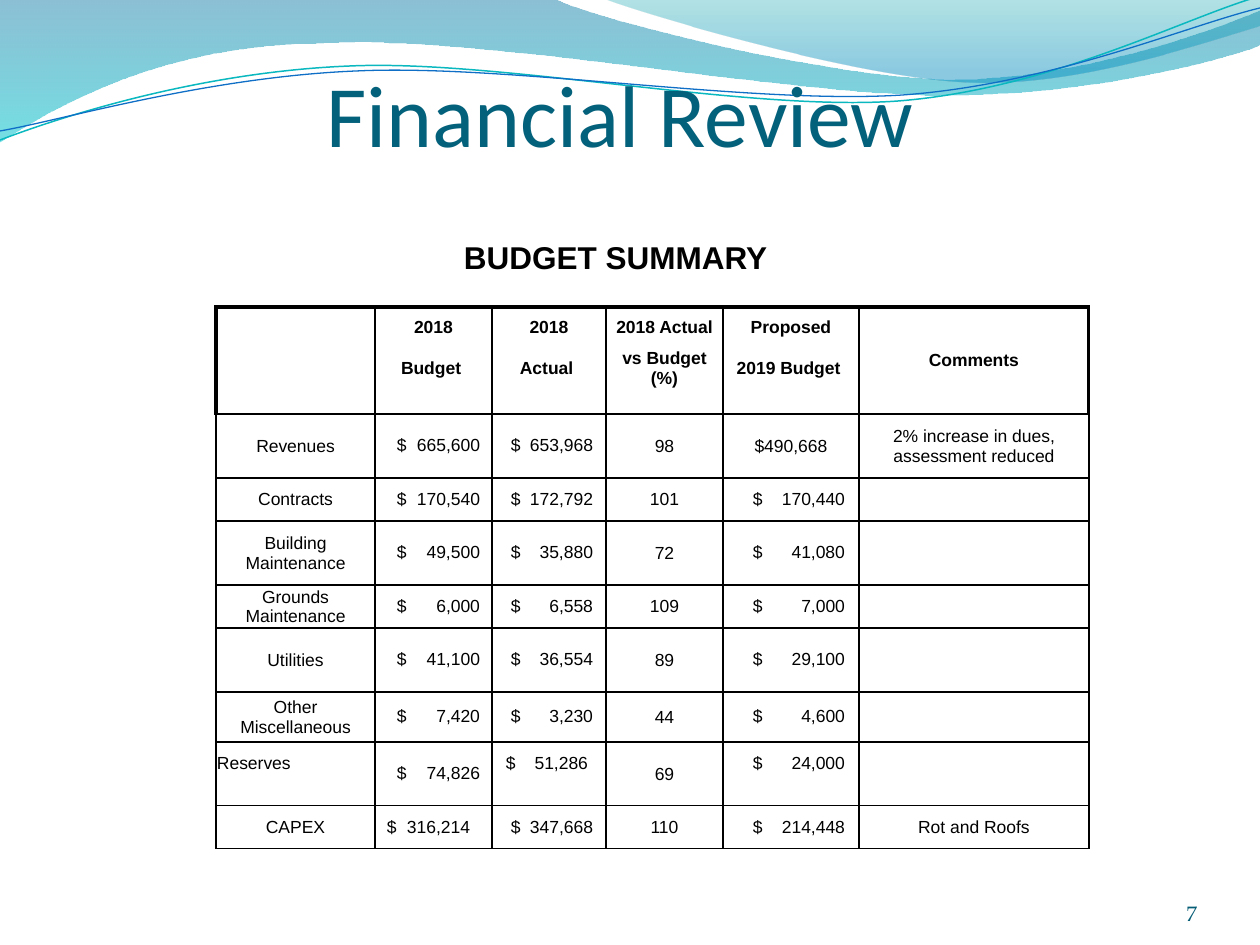
"""Build the financial review slide with its budget summary table."""
from lxml import etree
from pptx import Presentation
from pptx.dml.color import RGBColor
from pptx.enum.text import MSO_ANCHOR, PP_ALIGN
from pptx.oxml.ns import qn
from pptx.util import Emu, Pt

LEFT, CENTER, RIGHT = PP_ALIGN.LEFT, PP_ALIGN.CENTER, PP_ALIGN.RIGHT
TOP, MIDDLE, BOTTOM = MSO_ANCHOR.TOP, MSO_ANCHOR.MIDDLE, MSO_ANCHOR.BOTTOM

BLACK = RGBColor(0x00, 0x00, 0x00)
TITLE_TEAL = RGBColor(0x04, 0x61, 0x7B)
NUMBER_TEAL = RGBColor(0x04, 0x5C, 0x75)
DEEP_BLUE = RGBColor(0x00, 0x74, 0xA1)
AQUA = RGBColor(0x00, 0xC6, 0xCF)
SEA_GREEN = RGBColor(0x00, 0xA1, 0xA9)
SKY_BLUE = RGBColor(0x00, 0x8B, 0xBF)
LINE_AQUA = RGBColor(0x0A, 0xB8, 0xBF)
LINE_BLUE = RGBColor(0x0F, 0x6F, 0xC6)

WIDE_WAVE = [(0, -1), (554, -1), (600, 21, 837, 79, 955, 79),
             (1075, 79, 1207, 33, 1260, 11), (1261, 45),
             (1239, 55, 1096, 96, 940, 95), (784, 95, 481, 35, 324, 43),
             (163, 44, 58, 105, -1, 142)]
RIGHT_WAVE = [(604, -1), (641, 14, 859, 78, 969, 82),
              (1079, 87, 1211, 40, 1260, 26), (1260, 0)]
UPPER_LINE = [(0, 140), (60, 117, 199, 72, 349, 66),
              (498, 59, 747, 112, 898, 101), (1050, 89, 1182, 19, 1257, -3)]
LOWER_LINE = [(0, 131), (59, 121, 207, 77, 357, 71),
              (508, 64, 752, 105, 903, 95), (1053, 84, 1186, 26, 1260, 8)]

COLUMNS = [159, 117, 114, 117, 136, 230]
HEADER_HEIGHTS = [39, 44, 24]
BODY_HEIGHTS = [64, 43, 64, 43, 64, 50, 64, 43]
HEADER = [
    ["", "2018", "2018", "2018 Actual", "Proposed", "Comments"],
    ["", "Budget ", "Actual ", "vs Budget (%)", "2019 Budget ", ""],
    ["", "", "", "", "", ""],
]
BODY = [
    ["Revenues", "$\t665,600", "$\t653,968", "98", "$490,668",
     "2% increase in dues, assessment reduced"],
    ["Contracts", "$\t170,540", "$\t172,792", "101", "$\t170,440", ""],
    ["Building Maintenance", "$\t49,500", "$\t35,880", "72", "$\t41,080", ""],
    ["Grounds Maintenance", "$\t6,000", "$\t6,558", "109", "$\t7,000", ""],
    ["Utilities", "$\t41,100", "$\t36,554", "89", "$\t29,100", ""],
    ["Other Miscellaneous", "$\t7,420", "$\t3,230", "44", "$\t4,600", ""],
    ["Reserves", "$\t74,826", "$\t51,286", "69", "$\t24,000", ""],
    ["CAPEX", "$\t316,214", "$\t347,668", "110", "$\t214,448", "Rot and Roofs"],
]
MONEY_INDENT = {1: 22, 2: 19, 4: 30}
MONEY_TAB = {1: 83, 2: 82, 4: 92}
MONEY_SHIFT = {("Reserves", 2): -5, ("CAPEX", 1): -10}
RAISED_COLUMNS = (0, 2, 4)


def px(length):
    """Turn px into EMU."""
    return Emu(round(length * 914400 / 126))


def write(frame, text, font="Arial", size=10, color=BLACK, bold=False, align=CENTER,
          anchor=MIDDLE, margins=(0, 0, 0, 0), tab=None, cell=None):
    """Write one formatted paragraph into a text frame."""
    if cell is None:
        frame.word_wrap = True
    area = cell or frame
    area.vertical_anchor = anchor
    (area.margin_left, area.margin_top,
     area.margin_right, area.margin_bottom) = map(px, margins)
    para = frame.paragraphs[0]
    para.alignment = align
    if tab:
        tabs = etree.SubElement(para._p.get_or_add_pPr(), qn("a:tabLst"))
        etree.SubElement(tabs, qn("a:tab"), pos=str(px(tab)), algn="r")
    span = para.add_run()
    span.text = text
    span.font.name = font
    span.font.size = Pt(size)
    span.font.bold = bold
    span.font.color.rgb = color


class SlideBuilder:
    """Hold the style and the current slide."""

    def __init__(self, slide):
        self.slide = slide
        self.shapes = slide.shapes

    def outline(self, steps, close):
        """Add a freeform from line and curve steps."""
        corners = [(px(step[i]), px(step[i + 1]))
                   for step in steps for i in range(0, len(step), 2)]
        builder = self.shapes.build_freeform(*corners[0])
        builder.add_line_segments(corners[1:], close=close)
        shape = builder.convert_to_shape()
        shape.shadow.inherit = False
        segments = iter(list(shape._element.iter(qn("a:lnTo"))))
        for step in steps[1:]:
            parts = [next(segments) for _ in range(len(step) // 2)]
            if len(parts) == 3:
                curve = etree.Element(qn("a:cubicBezTo"))
                parts[0].addprevious(curve)
                for part in parts:
                    curve.append(part[0])
                    part.getparent().remove(part)
        return shape

    def wave(self, steps, stops):
        """Add a wave with a translucent gradient from top to bottom."""
        shape = self.outline(steps, True)
        shape.line.fill.background()
        shape.fill.gradient()
        shape.fill.gradient_angle = 270
        for stop, (position, color, opacity) in zip(shape.fill.gradient_stops, stops):
            stop.color.rgb = color
            stop.position = position
        colors = shape._element.spPr.iter(qn("a:srgbClr"))
        for element, (position, color, opacity) in zip(colors, stops):
            etree.SubElement(element, qn("a:alpha"), val=str(opacity * 1000))

    def ribbon(self, steps, color, width):
        """Add a thin curved line."""
        shape = self.outline(steps, False)
        shape.fill.background()
        shape.line.color.rgb = color
        shape.line.width = Pt(width)

    def title(self, text, left, top, width, height, **style):
        """Fill and move the title placeholder to the front."""
        title = self.shapes.title
        title.left, title.top, title.width, title.height = map(px, (left, top, width, height))
        write(title.text_frame, text, **style)
        title._element.getparent().append(title._element)

    def text(self, text, left, top, width, height, **style):
        """Add a text box."""
        box = self.shapes.add_textbox(*map(px, (left, top, width, height)))
        write(box.text_frame, text, **style)

    def borders(self, cell, widths):
        """Draw the left, right, top and bottom border of a cell."""
        properties = cell._tc.get_or_add_tcPr()
        for index, (side, width) in enumerate(zip("LRTB", widths)):
            line = etree.Element(qn(f"a:ln{side}"), w=str(Pt(width)))
            if width:
                fill = etree.SubElement(line, qn("a:solidFill"))
                etree.SubElement(fill, qn("a:srgbClr"), val=str(BLACK))
            else:
                etree.SubElement(line, qn("a:noFill"))
            properties.insert(index, line)

    def cell(self, cell, text, label, column, header):
        """Format and fill one table cell."""
        cell.fill.background()
        style = {"bold": header, "margins": (1, 1, 1, 0)}
        if "\t" in text:
            indent = MONEY_INDENT[column] + MONEY_SHIFT.get((label, column), 0)
            style.update(align=LEFT, margins=(indent, 0, 0, 0), tab=MONEY_TAB[column])
        if label == "Reserves" and column in RAISED_COLUMNS:
            indent = style["margins"][0]
            style.update(align=LEFT, anchor=TOP, margins=(indent, 12, 0, 0))
        if text:
            write(cell.text_frame, text, cell=cell, **style)
        else:
            cell.margin_left = cell.margin_right = cell.margin_top = cell.margin_bottom = 0
            etree.SubElement(cell.text_frame.paragraphs[0]._p, qn("a:endParaRPr"), sz="1000")

    def table(self, left, top):
        """Add the budget table."""
        rows, heights = HEADER + BODY, HEADER_HEIGHTS + BODY_HEIGHTS
        table = self.shapes.add_table(len(rows), len(COLUMNS), px(left), px(top),
                                      px(sum(COLUMNS)), px(sum(heights))).table
        table.first_row = table.horz_banding = False
        for column, width in zip(table.columns, COLUMNS):
            column.width = px(width)
        for row, height in zip(table.rows, heights):
            row.height = px(height)
        last_header, last_column = len(HEADER) - 1, len(COLUMNS) - 1
        for column in (0, last_column):
            table.cell(0, column).merge(table.cell(last_header, column))
        for index, values in enumerate(rows):
            header = index <= last_header
            for column, text in enumerate(values):
                cell = table.cell(index, column)
                self.cell(cell, text, values[0], column, header)
                self.borders(cell, (2 if header and column == 0 else 1,
                                    2 if header and column == last_column else 1,
                                    2 if index == 0 else int(index > last_header),
                                    int(index >= last_header)))


def main():
    """Build and save the deck."""
    deck = Presentation()
    deck.slide_width, deck.slide_height = px(1260), px(945)
    page = SlideBuilder(deck.slides.add_slide(deck.slide_layouts[5]))
    page.wave(WIDE_WAVE, [(0, DEEP_BLUE, 45), (1, AQUA, 55)])
    page.wave(RIGHT_WAVE, [(0, SEA_GREEN, 30), (0.8, SKY_BLUE, 45)])
    page.ribbon(UPPER_LINE, LINE_AQUA, 0.85)
    page.ribbon(LOWER_LINE, LINE_BLUE, 0.75)
    page.title("Financial Review ", 63, 106, 1134, 108, font="Calibri", size=50,
               color=TITLE_TEAL, anchor=BOTTOM, margins=(0, 0, 0, 49))
    page.table(216, 307)
    page.text("BUDGET SUMMARY", 451, 232, 340, 50, size=18, bold=True,
              align=LEFT, anchor=TOP, margins=(13, 6, 12, 6))
    page.text("7", 1092, 876, 105, 50, font="TeX Gyre Pagella", size=12,
              color=NUMBER_TEAL, align=RIGHT, anchor=BOTTOM)
    deck.save("out.pptx")


if __name__ == "__main__":
    main()
